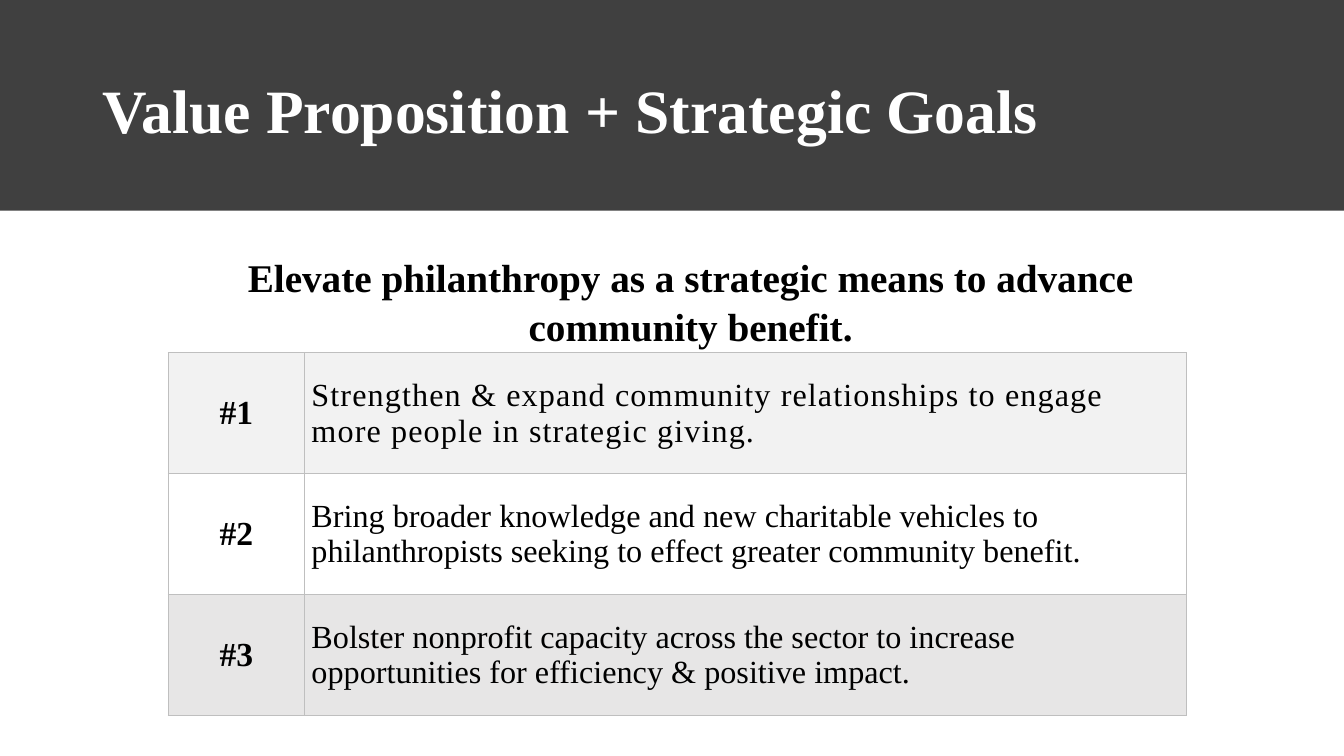
from dataclasses import dataclass

from lxml.etree import SubElement
from pptx import Presentation
from pptx.dml.color import RGBColor
from pptx.enum.shapes import MSO_SHAPE
from pptx.enum.text import MSO_ANCHOR, PP_ALIGN
from pptx.oxml.ns import qn
from pptx.slide import Slide
from pptx.table import _Cell
from pptx.text.text import TextFrame
from pptx.util import Inches, Pt

GRID_UNIT = 0.1


@dataclass(frozen=True)
class Theme:
    font: str = "Times New Roman"
    banner: str = "404040"
    light: str = "FFFFFF"
    dark: str = "000000"
    border: str = "BFBFBF"
    title_size: float = 44
    heading_size: float = 28
    number_size: float = 24
    goal_size: float = 23
    border_width: float = 1


@dataclass(frozen=True)
class Area:
    column: float
    row: float
    columns: float
    rows: float

    def box(self) -> tuple[int, int, int, int]:
        return grid(self.column), grid(self.row), grid(self.columns), grid(self.rows)


@dataclass(frozen=True)
class TextStyle:
    size: float
    color: str
    bold: bool
    alignment: PP_ALIGN = PP_ALIGN.LEFT
    line_spacing: float = 1.0


@dataclass(frozen=True)
class Goal:
    text: str
    fill: str
    tracking: int = 0


THEME = Theme()
SLIDE_AREA = Area(0, 0, 133.33, 75)
BANNER_AREA = Area(0, 0, 133.33, 20.9)
TITLE_AREA = Area(9.2, 4, 115, 14.5)
HEADING_AREA = Area(9.2, 21.6, 112.9, 20.2)
TABLE_AREA = Area(16.7, 35, 101, 36)
TABLE_COLUMNS = (13.5, 87.5)

TITLE_STYLE = TextStyle(THEME.title_size, THEME.light, True, line_spacing=0.9)
HEADING_STYLE = TextStyle(THEME.heading_size, THEME.dark, True, PP_ALIGN.CENTER, 1.05)
NUMBER_STYLE = TextStyle(THEME.number_size, THEME.dark, True, PP_ALIGN.CENTER)
GOAL_STYLE = TextStyle(THEME.goal_size, THEME.dark, False)

GOALS = (
    Goal("Strengthen & expand community relationships to engage more people in strategic giving.",
         "F2F2F2", 80),
    Goal("Bring broader knowledge and new charitable vehicles to philanthropists seeking to effect "
         "greater community benefit.", "FFFFFF"),
    Goal("Bolster nonprofit capacity across the sector to increase opportunities for efficiency "
         "& positive impact.", "E7E6E6"),
)


def grid(units: float) -> int:
    return Inches(units * GRID_UNIT)


def apply_format(target: object, values: dict[str, object]) -> None:
    for name, value in values.items():
        setattr(target, name, value)


def write_text(frame: TextFrame, text: str, style: TextStyle, tracking: int = 0) -> None:
    paragraph = frame.paragraphs[0]
    apply_format(paragraph, {"alignment": style.alignment, "line_spacing": style.line_spacing})
    run = paragraph.add_run()
    run.text = text
    apply_format(run.font, {"name": THEME.font, "size": Pt(style.size), "bold": style.bold})
    run.font.color.rgb = RGBColor.from_string(style.color)
    if tracking:
        run._r.get_or_add_rPr().set("spc", str(tracking))


def draw_banner(slide: Slide) -> None:
    banner = slide.shapes.add_shape(MSO_SHAPE.RECTANGLE, *BANNER_AREA.box())
    banner.shadow.inherit = False
    banner.fill.solid()
    banner.fill.fore_color.rgb = RGBColor.from_string(THEME.banner)
    banner.line.fill.background()


def draw_text(slide: Slide, area: Area, text: str, style: TextStyle,
              frame_format: dict[str, object]) -> None:
    frame = slide.shapes.add_textbox(*area.box()).text_frame
    apply_format(frame, {"word_wrap": True, **frame_format})
    write_text(frame, text, style)


def draw_borders(cell: _Cell) -> None:
    properties = cell._tc.get_or_add_tcPr()
    for position, side in enumerate(("lnL", "lnR", "lnT", "lnB")):
        line = SubElement(properties, qn(f"a:{side}"), w=str(Pt(THEME.border_width)))
        fill = SubElement(line, qn("a:solidFill"))
        SubElement(fill, qn("a:srgbClr"), val=THEME.border)
        properties.insert(position, line)


def draw_cell(cell: _Cell, text: str, style: TextStyle, fill: str, tracking: int = 0) -> None:
    apply_format(cell, {
        "vertical_anchor": MSO_ANCHOR.MIDDLE,
        "margin_left": Inches(0.07),
        "margin_right": Inches(0.07),
        "margin_top": 0,
        "margin_bottom": 0,
    })
    cell.fill.solid()
    cell.fill.fore_color.rgb = RGBColor.from_string(fill)
    draw_borders(cell)
    write_text(cell.text_frame, text, style, tracking)


def draw_goals(slide: Slide) -> None:
    frame = slide.shapes.add_table(len(GOALS), len(TABLE_COLUMNS), *TABLE_AREA.box())
    table = frame.table
    apply_format(table, {"first_row": False, "horz_banding": False})
    for column, width in zip(table.columns, TABLE_COLUMNS):
        column.width = grid(width)
    for index, goal in enumerate(GOALS):
        table.rows[index].height = grid(TABLE_AREA.rows / len(GOALS))
        draw_cell(table.cell(index, 0), f"#{index + 1}", NUMBER_STYLE, goal.fill)
        draw_cell(table.cell(index, 1), goal.text, GOAL_STYLE, goal.fill, goal.tracking)


def main() -> None:
    presentation = Presentation()
    apply_format(presentation, {
        "slide_width": grid(SLIDE_AREA.columns),
        "slide_height": grid(SLIDE_AREA.rows),
    })
    slide = presentation.slides.add_slide(presentation.slide_layouts[6])
    draw_banner(slide)
    draw_text(slide, TITLE_AREA, "Value Proposition + Strategic Goals", TITLE_STYLE,
              {"vertical_anchor": MSO_ANCHOR.MIDDLE})
    draw_text(slide, HEADING_AREA,
              "Elevate philanthropy as a strategic means to advance community benefit.",
              HEADING_STYLE, {"margin_left": Inches(0.67), "margin_top": Inches(0.33)})
    draw_goals(slide)
    presentation.save("out.pptx")


if __name__ == "__main__":
    main()
